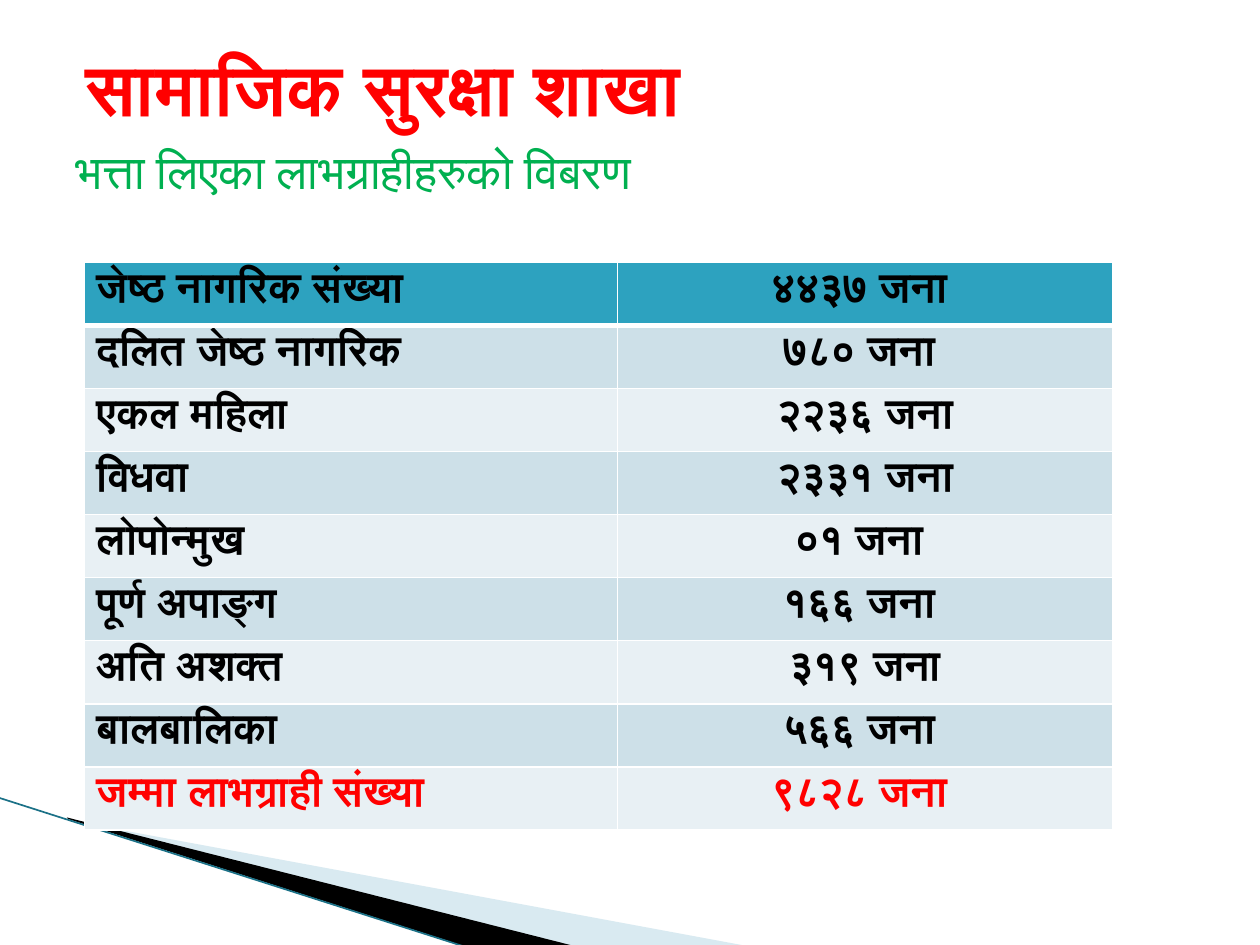
"""Build the slide on social security allowance recipients."""
from dataclasses import dataclass
from lxml import etree
from pptx import Presentation
from pptx.dml.color import RGBColor
from pptx.enum.shapes import MSO_CONNECTOR
from pptx.enum.text import MSO_ANCHOR, PP_ALIGN
from pptx.oxml.ns import qn
from pptx.util import Cm, Pt

LINE = MSO_CONNECTOR.STRAIGHT
TOP, MID = MSO_ANCHOR.TOP, MSO_ANCHOR.MIDDLE
LEFT, CENTER = PP_ALIGN.LEFT, PP_ALIGN.CENTER


@dataclass(frozen=True)
class Theme:
    face: str = "Noto Sans Mono"
    red: str = "FF0000"
    green: str = "00B050"
    black: str = "000000"
    white: str = "FFFFFF"
    head: str = "2DA2BF"
    bands: tuple = ("E8F0F4", "CDE0E8")
    pale: str = "A0CBDC"
    edge: str = "1B7187"
    title: int = 41
    sub: int = 27
    cell: int = 24


def write(frame, text, size, color, bold, align=LEFT):
    para = frame.paragraphs[0]
    para.alignment = align
    run = para.add_run()
    run.text = text
    look = {"name": theme.face, "size": Pt(size), "bold": bold}
    for key, value in look.items():
        setattr(run.font, key, value)
    run.font.color.rgb = RGBColor.from_string(color)


def border(cell, side, width):
    props = cell._tc.get_or_add_tcPr()
    line = etree.SubElement(props, qn(f"a:ln{side}"), w=str(Pt(width)))
    fill = etree.SubElement(line, qn("a:solidFill"))
    etree.SubElement(fill, qn("a:srgbClr"), val=theme.white)


theme = Theme()
deck = Presentation()
deck.slide_width, deck.slide_height = Cm(25.4), Cm(19.05)
slide = deck.slides.add_slide(deck.slide_layouts[6])
shapes = slide.shapes

wedges = [
    (theme.pale, 40, [(1.4, 16.54), (15.11, 19.08), (11.58, 19.08), (1.4, 16.51)]),
    (theme.black, 100, [(1.35, 16.48), (11.61, 19.08), (9.45, 19.1), (1.37, 16.51)]),
]
for color, alpha, points in wedges:
    start, *rest = [(Cm(x), Cm(y)) for x, y in points]
    build = shapes.build_freeform(*start)
    build.add_line_segments(rest, close=True)
    wedge = build.convert_to_shape()
    wedge.shadow.inherit = False
    wedge.line.fill.background()
    wedge.fill.solid()
    wedge.fill.fore_color.rgb = RGBColor.from_string(color)
    if alpha < 100:
        tint = wedge._element.spPr.find(qn("a:solidFill"))[0]
        etree.SubElement(tint, qn("a:alpha"), val=str(alpha * 1000))

edge = shapes.add_connector(LINE, Cm(-0.03), Cm(16.08), Cm(9.42), Cm(19.1))
edge.line.color.rgb = RGBColor.from_string(theme.edge)
edge.line.width = Pt(0.95)
etree.SubElement(edge._element.spPr, qn("a:effectLst"))

boxes = [
    ((1.47, 0.64, 22.86, 2.21), "सामाजिक सुरक्षा शाखा", theme.title, theme.red, True, MID, 0.25),
    ((1.07, 2.74, 23.06, 15.24), "भत्ता लिएका लाभग्राहीहरुको विबरण", theme.sub, theme.green, False, TOP, 0.45),
]
for place, text, size, color, bold, anchor, inset in boxes:
    frame = shapes.add_textbox(*map(Cm, place)).text_frame
    form = {"word_wrap": True, "vertical_anchor": anchor, "margin_left": Cm(inset)}
    for key, value in form.items():
        setattr(frame, key, value)
    write(frame, text, size, color, bold)

rows = [
    ("जेष्ठ नागरिक संख्या", "४४३७ जना "),
    ("दलित जेष्ठ नागरिक", "७८० जना "),
    ("एकल महिला", "२२३६ जना"),
    ("विधवा", "२३३१ जना"),
    ("लोपोन्मुख", "०१ जना "),
    ("पूर्ण अपाङ्ग", "१६६ जना "),
    ("अति अशक्त", "३१९ जना"),
    ("बालबालिका", "५६६ जना "),
    ("जम्मा लाभग्राही संख्या", "९८२८ जना "),
]
widths = (10.75, 9.98)
high = 1.22
last = len(rows) - 1
table = shapes.add_table(
    len(rows), len(widths), Cm(1.7), Cm(5.29), Cm(sum(widths)), Cm(high * len(rows))
).table
for column, width in zip(table.columns, widths):
    column.width = Cm(width)

for r, texts in enumerate(rows):
    table.rows[r].height = Cm(high)
    fill = theme.bands[r % 2] if r else theme.head
    color = theme.red if r == last else theme.black
    for c, text in enumerate(texts):
        cell = table.cell(r, c)
        for side in "LRTB":
            thick = (r, side) in ((0, "B"), (1, "T"))
            border(cell, side, 3 if thick else 1)
        cell.fill.solid()
        cell.fill.fore_color.rgb = RGBColor.from_string(fill)
        write(cell.text_frame, text, theme.cell, color, True, (LEFT, CENTER)[c])

deck.save("out.pptx")
